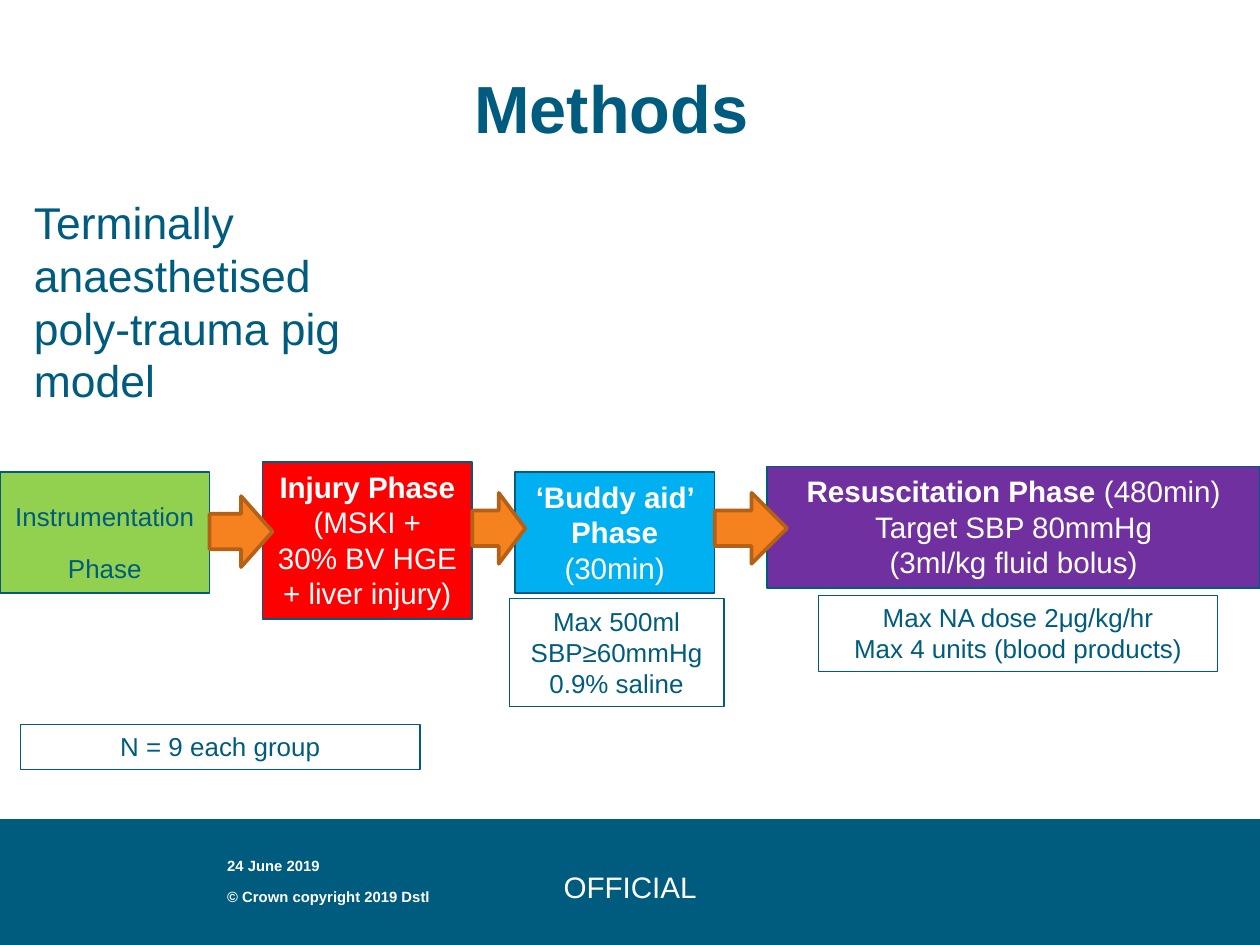
import pptx
import pptx.util
import pptx.dml.color
import pptx.enum.shapes
import pptx.enum.text

Pt = pptx.util.Pt
Shape = pptx.enum.shapes.MSO_SHAPE
Align = pptx.enum.text.PP_ALIGN
Anchor = pptx.enum.text.MSO_ANCHOR

WIDE, HIGH = 680.4, 510.4
COLORS = {"teal": "005C7E", "white": "FFFFFF", "green": "92D050", "red": "FF0000",
          "blue": "00B0F0", "purple": "7030A0", "orange": "F5821F", "rust": "B56017"}

# A line of text is a list of (words, bold) runs.
PHASES = [
    {"at": (0, 255, 113.2, 65.5), "fill": "green", "color": "teal", "size": 14, "space": 28.5,
     "lines": [[("Instrumentation Phase", False)]]},
    {"at": (141.8, 249.6, 113.2, 84.8), "fill": "red",
     "lines": [[("Injury Phase", True)], [("(MSKI +", False)],
               [("30% BV HGE + liver injury)", False)]]},
    {"at": (277.9, 255, 108, 65.5), "fill": "blue",
     "lines": [[("‘Buddy aid’ Phase ", True), ("(30min)", False)]]},
    {"at": (414.4, 252, 266, 65.5), "fill": "purple",
     "lines": [[("Resuscitation Phase ", True), ("(480min)", False)],
               [("Target SBP 80mmHg", False)], [("(3ml/kg fluid bolus)", False)]]},
]
ARROWS = [(268, 5.4), (266.2, 5.8), (266.2, 10.6)]  # top, overlap with the next phase
TALL = 38.3
NOTES = [
    ((442, 321.6, 215.6, 41), ["Max NA dose 2μg/kg/hr", "Max 4 units (blood products)"]),
    ((275, 323.3, 116, 58.3), ["Max 500ml SBP≥60mmHg 0.9% saline"]),
    ((11.2, 391.2, 215.6, 24.4), ["N = 9 each group"]),
]
BAND = (0, 442.4, WIDE, 68)
LABELS = [
    {"at": (11.5, 24, 637.4, 85), "text": "Methods", "size": 36, "bold": True,
     "color": "teal", "align": Align.CENTER, "space": 1.2},
    {"at": (11.2, 102.2, 198.4, 124.7), "text": "Terminally anaesthetised poly-trauma pig model",
     "size": 24, "color": "teal", "space": 28.5},
    {"at": (246.8, 442.4, 187.1, 68), "text": "OFFICIAL", "size": 16, "align": Align.CENTER,
     "anchor": Anchor.MIDDLE, "space": 24},
    {"at": (115.6, 476, 130.4, 22.3), "text": "© Crown copyright 2019 Dstl", "size": 8, "bold": True},
    {"at": (115.6, 453.6, 130.4, 22.3), "text": "24 June 2019", "size": 8, "bold": True,
     "anchor": Anchor.BOTTOM},
]


def tint(name):
    return pptx.dml.color.RGBColor.from_string(COLORS[name])


def place(at):
    return [Pt(n) for n in at]


def assign(thing, values):
    for name, value in values.items():
        setattr(thing, name, value)


def write(shape, lines, size=16, color="white", align=Align.CENTER, anchor=Anchor.TOP, space=None):
    """Fill the shape with lines of runs; space is a factor below 5, else points."""
    frame = shape.text_frame
    assign(frame, {"word_wrap": True, "vertical_anchor": anchor})
    for i, line in enumerate(lines):
        para = frame.paragraphs[0] if i == 0 else frame.add_paragraph()
        para.alignment = align
        if space:
            para.line_spacing = space if space < 5 else Pt(space)
        for words, bold in line:
            run = para.add_run()
            run.text = words
            assign(run.font, {"name": "Arial", "size": Pt(size), "bold": bold})
            run.font.color.rgb = tint(color)


def draw(slide, kind, at, fill=None, line=None, width=1):
    shape = slide.shapes.add_shape(kind, *place(at))
    shape.shadow.inherit = False
    for part, name in ((shape.fill, fill), (shape.line.fill, line)):
        if name:
            part.solid()
            part.fore_color.rgb = tint(name)
        else:
            part.background()
    if line:
        shape.line.width = Pt(width)
    return shape


def main():
    deck = pptx.Presentation()
    assign(deck, {"slide_width": Pt(WIDE), "slide_height": Pt(HIGH)})
    slide = deck.slides.add_slide(deck.slide_layouts[6])

    draw(slide, Shape.RECTANGLE, BAND, "teal")
    for label in LABELS:
        box = slide.shapes.add_textbox(*place(label["at"]))
        write(box, [[(label["text"], label.get("bold", False))]], label["size"],
              label.get("color", "white"), label.get("align", Align.LEFT),
              label.get("anchor", Anchor.TOP), label.get("space"))

    for phase in PHASES:
        box = draw(slide, Shape.RECTANGLE, phase["at"], phase["fill"], "teal")
        write(box, phase["lines"], phase.get("size", 16), phase.get("color", "white"),
              space=phase.get("space"))
    for (top, over), last, after in zip(ARROWS, PHASES, PHASES[1:]):
        left = last["at"][0] + last["at"][2]
        span = after["at"][0] + over - left
        draw(slide, Shape.RIGHT_ARROW, (left, top, span, TALL), "orange", "rust", 2)

    for at, lines in NOTES:
        box = draw(slide, Shape.RECTANGLE, at, None, "teal", 0.75)
        write(box, [[(words, False)] for words in lines], 14, "teal")

    deck.save("out.pptx")


if __name__ == "__main__":
    main()
